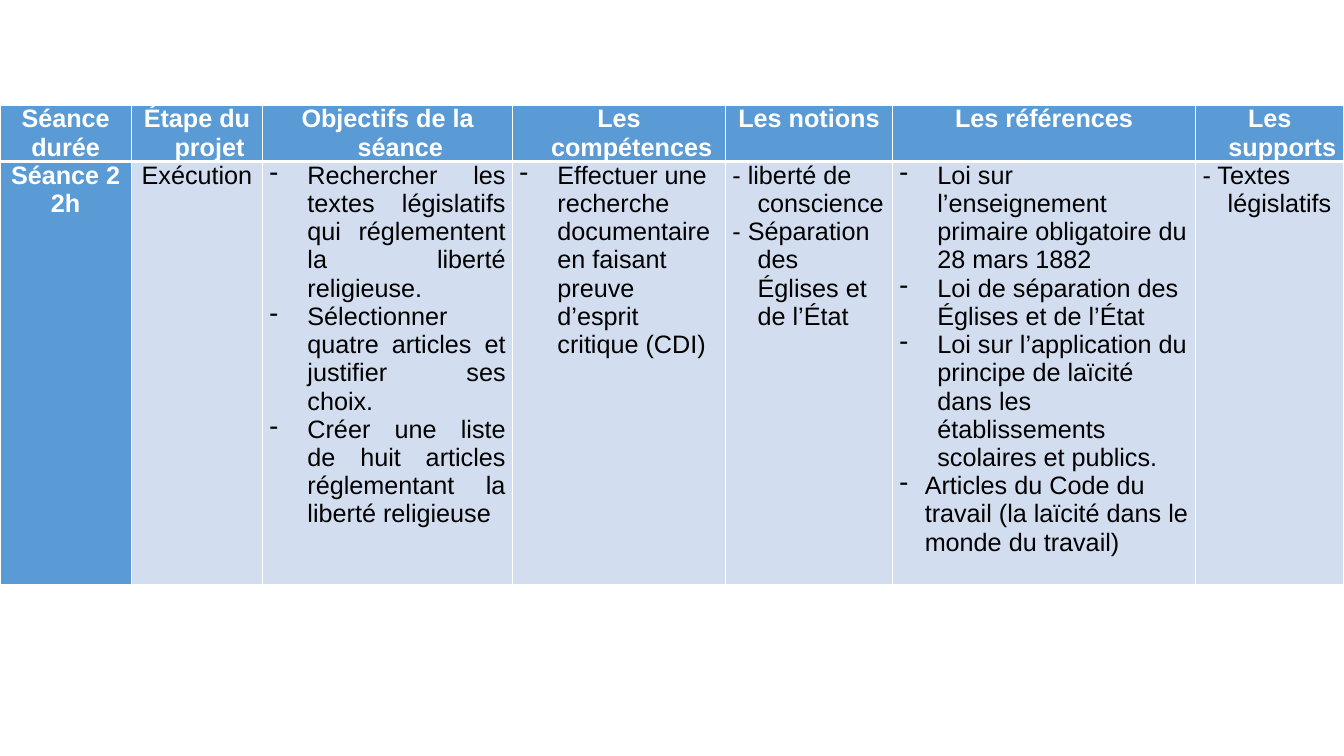
from lxml.etree import SubElement as Sub
from pptx import Presentation
from pptx.dml.color import RGBColor
from pptx.enum.text import PP_ALIGN as Align
from pptx.oxml.ns import qn
from pptx.util import Pt

BLUE, PALE, WHITE, BLACK = "5B9BD5", "D2DEEF", "FFFFFF", "000000"
HANG, DASH = 18, 27  # hanging indents of plain and dashed text


def write(cell, lines, fill, color=BLACK, bold=False, align=Align.LEFT,
          top=1, base=1):
    """Fill a cell; each line is (text, left margin, first indent, dashed)."""
    cell.margin_left = cell.margin_right = Pt(5)
    cell.margin_top = cell.margin_bottom = Pt(0)
    frame = cell.text_frame
    for i, (text, left, first, dashed) in enumerate(lines):
        para = frame.add_paragraph() if i else frame.paragraphs[0]
        para.alignment = align
        run = para.add_run()
        run.text = text
        font = run.font
        font.name, font.size, font.bold = "Arial", Pt(18), bold
        font.color.rgb = RGBColor.from_string(color)
        props = para._p.get_or_add_pPr()
        props.set("marL", str(Pt(left)))
        props.set("indent", str(Pt(first)))
        if dashed:
            Sub(props, qn("a:buChar"), char="-")
        else:
            Sub(props, qn("a:buNone"))
    box = cell._tc.get_or_add_tcPr()
    for side, width in zip("LRTB", (1, 1, top, base)):
        line = Sub(box, qn(f"a:ln{side}"), w=str(Pt(width)))
        Sub(Sub(line, qn("a:solidFill")), qn("a:srgbClr"), val=WHITE)
    cell.fill.solid()
    cell.fill.fore_color.rgb = RGBColor.from_string(fill)


def hang(*texts, size=HANG, dashed=False):
    return [(text, size, -size, dashed) for text in texts]


deck = Presentation()
deck.slide_width, deck.slide_height = Pt(960), Pt(540)
slide = deck.slides.add_slide(deck.slide_layouts[6])

heads = [
    ["Séance", "durée"], ["Étape du projet"], ["Objectifs de la séance"],
    ["Les compétences"], ["Les notions"], ["Les références"],
    ["Les supports"],
]
goals = hang(
    "Rechercher les textes législatifs qui réglementent la liberté religieuse.",
    "Sélectionner quatre articles et justifier ses choix.",
    "Créer une liste de huit articles réglementant la liberté religieuse",
    size=DASH, dashed=True)
skills = hang(
    "Effectuer une recherche documentaire en faisant preuve d’esprit critique (CDI)",
    size=DASH, dashed=True)
notions = hang("- liberté de conscience", "- Séparation des Églises et de l’État")
laws = hang(
    "Loi sur l’enseignement primaire obligatoire du 28 mars 1882",
    "Loi de séparation des Églises et de l’État",
    "Loi sur l’application du principe de laïcité dans les établissements scolaires et publics.",
    size=DASH, dashed=True)
laws += hang("Articles du Code du travail (la laïcité dans le monde du travail)",
             dashed=True)
body = [
    (hang("Exécution"), Align.CENTER),
    (goals, Align.JUSTIFY),
    (skills, Align.LEFT),
    (notions, Align.LEFT),
    (laws, Align.LEFT),
    (hang("- Textes législatifs"), Align.LEFT),
]

widths = [93.8, 93.8, 178.6, 152, 119.4, 216.4, 106]
heights = [40, 302.4]
table = slide.shapes.add_table(2, len(widths), Pt(0), Pt(75),
                               Pt(sum(widths)), Pt(sum(heights))).table
for col, width in zip(table.columns, widths):
    col.width = Pt(width)
for row, height in zip(table.rows, heights):
    row.height = Pt(height)

label = dict(fill=BLUE, color=WHITE, bold=True, align=Align.CENTER)
for i, texts in enumerate(heads):
    write(table.cell(0, i), hang(*texts), base=3, **label)
write(table.cell(1, 0), hang("Séance 2") + [("2h", 0, -10, False)],
      top=3, **label)
for i, (lines, align) in enumerate(body, 1):
    write(table.cell(1, i), lines, PALE, align=align, top=3)

deck.save("out.pptx")
